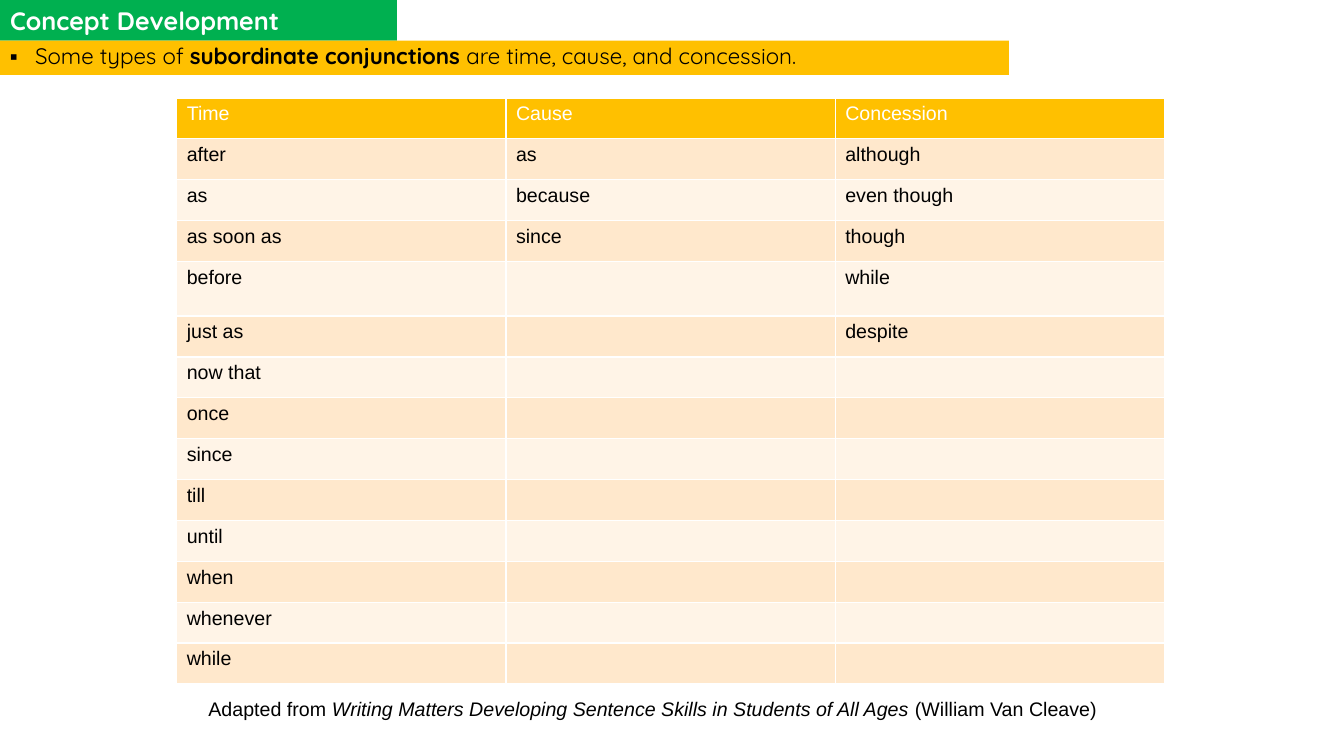
"""Build a slide listing subordinate conjunctions by type."""
from itertools import zip_longest

from lxml.etree import SubElement
from pptx import Presentation
from pptx.dml.color import RGBColor
from pptx.enum.shapes import MSO_SHAPE as Shape
from pptx.enum.text import MSO_ANCHOR as Anchor, MSO_AUTO_SIZE as AutoSize, PP_ALIGN as Align
from pptx.oxml.ns import qn
from pptx.util import Pt

COLOURS = {
    "green": "00B050",
    "amber": "FFC000",
    "dark band": "FFE8CC",
    "light band": "FFF4E7",
    "black": "000000",
    "white": "FFFFFF",
}
CONJUNCTIONS = {
    "Time": ["after", "as", "as soon as", "before", "just as", "now that", "once",
             "since", "till", "until", "when", "whenever", "while"],
    "Cause": ["as", "because", "since"],
    "Concession": ["although", "even though", "though", "while", "despite"],
}
ROW_HEIGHT, TALL_ROW_HEIGHT, TALL_ROW = 29.2, 39, 4


def paint(shape, colour):
    shape.fill.solid()
    shape.fill.fore_color.rgb = RGBColor.from_string(COLOURS[colour])


def write(para, pieces, colour, **formats):
    for text, extra in pieces:
        span = para.add_run()
        span.text = text
        span.font.color.rgb = RGBColor.from_string(COLOURS[colour])
        for name, value in {"bold": False, **formats, **extra}.items():
            setattr(span.font, name, value)


deck = Presentation()
deck.slide_width, deck.slide_height = Pt(960), Pt(540)
page = deck.slides.add_slide(deck.slide_layouts[5])

title = page.shapes.title
title.left, title.top, title.width, title.height = Pt(0), Pt(0), Pt(283.5), Pt(29)
paint(title, "green")

table = page.shapes.add_table(14, 3, Pt(126.2), Pt(70), Pt(705.6), Pt(418.6)).table
for number, row in enumerate(table.rows):
    row.height = Pt(TALL_ROW_HEIGHT if number == TALL_ROW else ROW_HEIGHT)
lists = [[heading, *words] for heading, words in CONJUNCTIONS.items()]
for number, words in enumerate(zip_longest(*lists, fillvalue="")):
    band = "amber" if number == 0 else "dark band" if number % 2 else "light band"
    for column, word in enumerate(words):
        cell = table.cell(number, column)
        paint(cell, band)
        para = cell.text_frame.paragraphs[0]
        para.font.size = Pt(14)
        if word:
            write(para, [(word, {})], "black" if number else "white",
                  size=Pt(14), name="Arial")

source = page.shapes.add_textbox(Pt(141.8), Pt(494), Pt(773.3), Pt(30))
source.text_frame.word_wrap = True
write(source.text_frame.paragraphs[0], [
    ("Adapted from ", {}),
    ("Writing Matters Developing Sentence Skills in Students of All Ages ", {"italic": True}),
    ("(William Van Cleave)", {}),
], "black", size=Pt(14), name="Arial")

concept = page.shapes.add_shape(Shape.RECTANGLE, Pt(0), Pt(29), Pt(720.7), Pt(24.5))
concept.shadow.inherit = False
concept.line.fill.background()
paint(concept, "amber")

for bar in (title, concept):
    frame = bar.text_frame
    for name, value in {
        "word_wrap": True, "auto_size": AutoSize.NONE, "vertical_anchor": Anchor.MIDDLE,
        "margin_left": Pt(7.2), "margin_right": Pt(7.2),
        "margin_top": Pt(3.6), "margin_bottom": Pt(3.6),
    }.items():
        setattr(frame, name, value)
    frame.paragraphs[0].alignment = Align.LEFT

write(title.text_frame.paragraphs[0], [("Concept Development", {})], "white",
      size=Pt(18), name="Quicksand", bold=True)

para = concept.text_frame.paragraphs[0]
para.line_spacing = 0.9
properties = para._p.get_or_add_pPr()
properties.set("marL", str(Pt(18)))
properties.set("indent", str(Pt(-18)))
bullet_colour = SubElement(properties, qn("a:buClr"))
SubElement(bullet_colour, qn("a:srgbClr"), val=COLOURS["black"])
SubElement(properties, qn("a:buFont"), typeface="Arial")
SubElement(properties, qn("a:buChar"), char="▪")
write(para, [
    ("Some types of ", {}),
    ("subordinate conjunctions ", {"bold": True}),
    ("are time, cause, and concession.", {}),
], "black", size=Pt(16), name="Quicksand")

deck.save("out.pptx")
